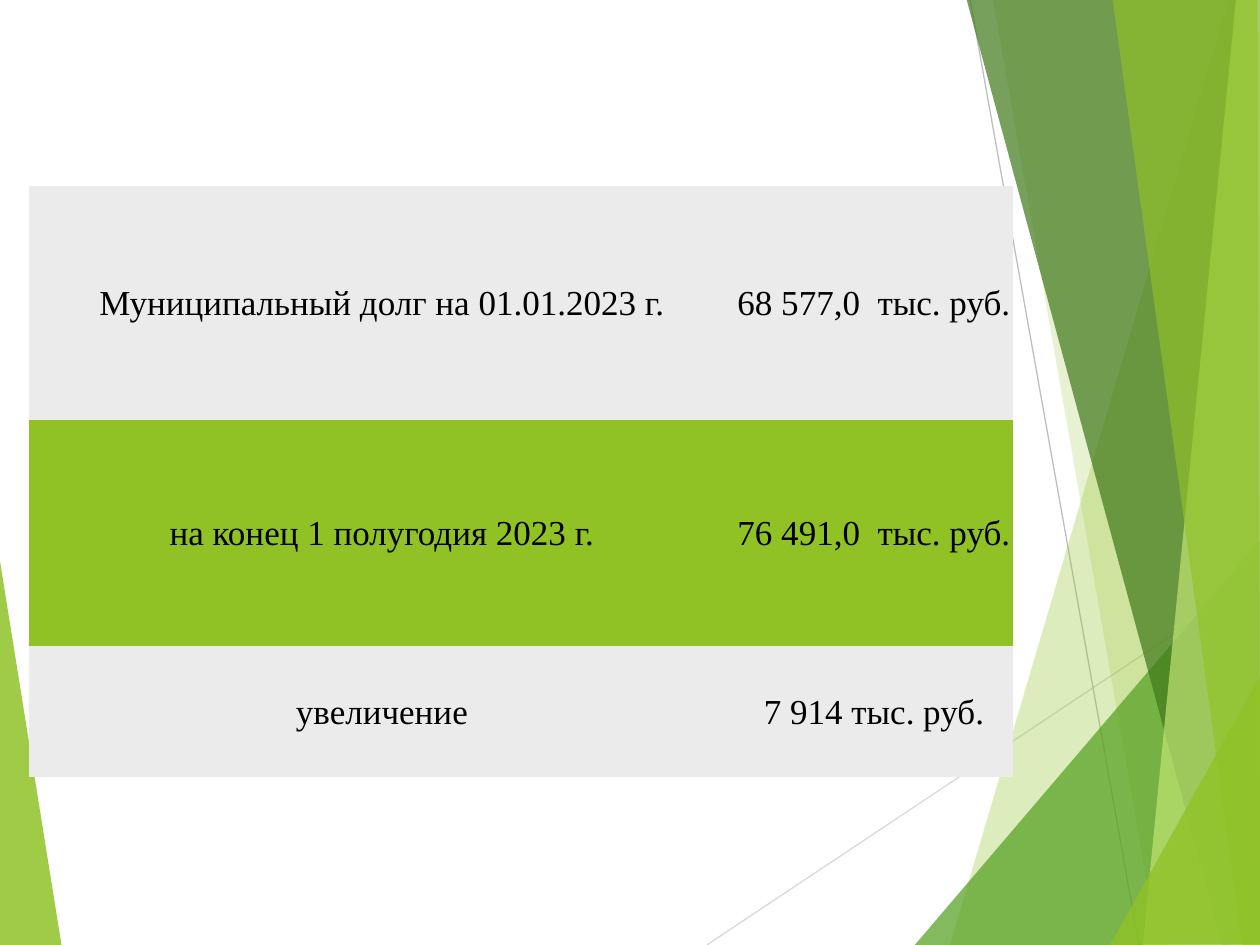
from lxml import etree
from pptx import Presentation
from pptx import util as u
from pptx.dml.color import RGBColor
from pptx.enum import shapes, text
from pptx.oxml.ns import qn

Inches = u.Inches
LIME = RGBColor(0x90, 0xC2, 0x26)
PALE_LIME = RGBColor(0xC0, 0xE4, 0x74)
GREEN = RGBColor(0x54, 0xA0, 0x21)
DARK_GREEN = RGBColor(0x3F, 0x78, 0x19)
LIGHT_GRAY = RGBColor(0xD9, 0xD9, 0xD9)
GRAY = RGBColor(0xBF, 0xBF, 0xBF)
ROW_GRAY = RGBColor(0xEB, 0xEB, 0xEB)
BLACK = RGBColor(0, 0, 0)
NO_STYLE = "{2D5ABB26-0587-4C30-8999-92F81FD0307C}"

RAYS = [
    ([(5.61, 7.5), (10.01, 4.57)], LIGHT_GRAY),
    ([(7.7, 0), (9.04, 7.5)], GRAY),
]
LEFT_FACET = ([(-0.01, 4.39), (0.49, 7.51), (-0.01, 7.5)], LIME, 85)
RIGHT_FACETS = [
    ([(9.75, 0), (7.54, 7.5), (10.02, 7.51), (10.01, 0.01)], LIME, 30),
    ([(7.88, -0.01), (9.19, 7.5), (10.01, 7.5), (10.01, -0.01)], LIME, 20),
    ([(7.26, 7.5), (10, 4.29), (10.01, 7.5)], GREEN, 72),
    ([(7.67, -0.01), (9.7, 7.5), (10.01, 7.49), (10.01, -0.01)], DARK_GREEN, 70),
    ([(9.81, -0.01), (9.07, 7.5), (10.01, 7.5), (10, -0.01)], PALE_LIME, 70),
    ([(8.83, -0.01), (9.86, 7.5), (10, 7.5), (9.98, -0.01)], LIME, 65),
    ([(8.81, 7.5), (10.01, 5.35), (10.01, 7.49)], LIME, 80),
]
DEBT_ROWS = [
    ("Муниципальный долг на 01.01.2023 г.", "68 577,0  тыс. руб."),
    ("на конец 1 полугодия 2023 г.", "76 491,0  тыс. руб."),
    ("увеличение", "7 914 тыс. руб."),
]
COLUMN_SHARES = (5.61, 2.21)
ROW_SHARES = (1.85, 1.8, 1.04)


def add_facet(slide, left, top, points, color, opacity):
    """Add one translucent polygon, offset by left and top."""
    corners = [(left + Inches(x), top + Inches(y)) for x, y in points]
    builder = slide.shapes.build_freeform(*corners[0], scale=1.0)
    builder.add_line_segments(corners[1:], close=True)
    shape = builder.convert_to_shape()
    shape.shadow.inherit = False
    shape.line.fill.background()
    shape.fill.solid()
    shape.fill.fore_color.rgb = color
    fill_color = shape.element.spPr.find(qn("a:solidFill"))[0]
    etree.SubElement(fill_color, qn("a:alpha"), val=str(opacity * 1000))


def add_ray(slide, left, top, ends, color):
    """Add one thin straight line, offset by left and top."""
    (x1, y1), (x2, y2) = ends
    line = slide.shapes.add_connector(
        shapes.MSO_CONNECTOR.STRAIGHT,
        left + Inches(x1), top + Inches(y1), left + Inches(x2), top + Inches(y2))
    line.line.color.rgb = color
    line.line.width = u.Pt(0.75)
    etree.SubElement(line.element.spPr, qn("a:effectLst"))


def add_backdrop(slide, left, top):
    """Place the facets and rays from the given corner."""
    add_facet(slide, left, top, *LEFT_FACET)
    for ends, color in RAYS:
        add_ray(slide, left, top, ends, color)
    for points, color, opacity in RIGHT_FACETS:
        add_facet(slide, left, top, points, color, opacity)


def format_cell(cell, content, color):
    """Fill a table cell and set its centred text."""
    cell.fill.solid()
    cell.fill.fore_color.rgb = color
    cell.vertical_anchor = text.MSO_ANCHOR.MIDDLE
    cell.margin_left = cell.margin_top = cell.margin_right = Inches(0.01)
    cell.margin_bottom = 0
    cell.text_frame.text = content
    paragraph = cell.text_frame.paragraphs[0]
    paragraph.alignment = text.PP_ALIGN.CENTER
    font = paragraph.runs[0].font
    font.name = "Times New Roman"
    font.size = u.Pt(20)
    font.color.rgb = BLACK


def add_debt_table(slide, left, top, width, height):
    """Place the municipal debt table in the given box."""
    frame = slide.shapes.add_table(
        len(DEBT_ROWS), len(COLUMN_SHARES), left, top, width, height)
    table = frame.table
    table.first_row = False
    table.horz_banding = False
    next(frame.element.iter(qn("a:tableStyleId"))).text = NO_STYLE
    for column, share in zip(table.columns, COLUMN_SHARES):
        column.width = int(width * share / sum(COLUMN_SHARES))
    for row, share in zip(table.rows, ROW_SHARES):
        row.height = int(height * share / sum(ROW_SHARES))
    for row_index, contents in enumerate(DEBT_ROWS):
        color = LIME if row_index % 2 else ROW_GRAY
        for column_index, content in enumerate(contents):
            format_cell(table.cell(row_index, column_index), content, color)


def main():
    """Build and save the presentation."""
    presentation = Presentation()
    presentation.slide_width = Inches(10)
    presentation.slide_height = Inches(7.5)
    slide = presentation.slides.add_slide(presentation.slide_layouts[6])
    add_backdrop(slide, Inches(0), Inches(0))
    add_debt_table(slide, Inches(0.23), Inches(1.48), Inches(7.81), Inches(4.69))
    presentation.save("out.pptx")


if __name__ == "__main__":
    main()
